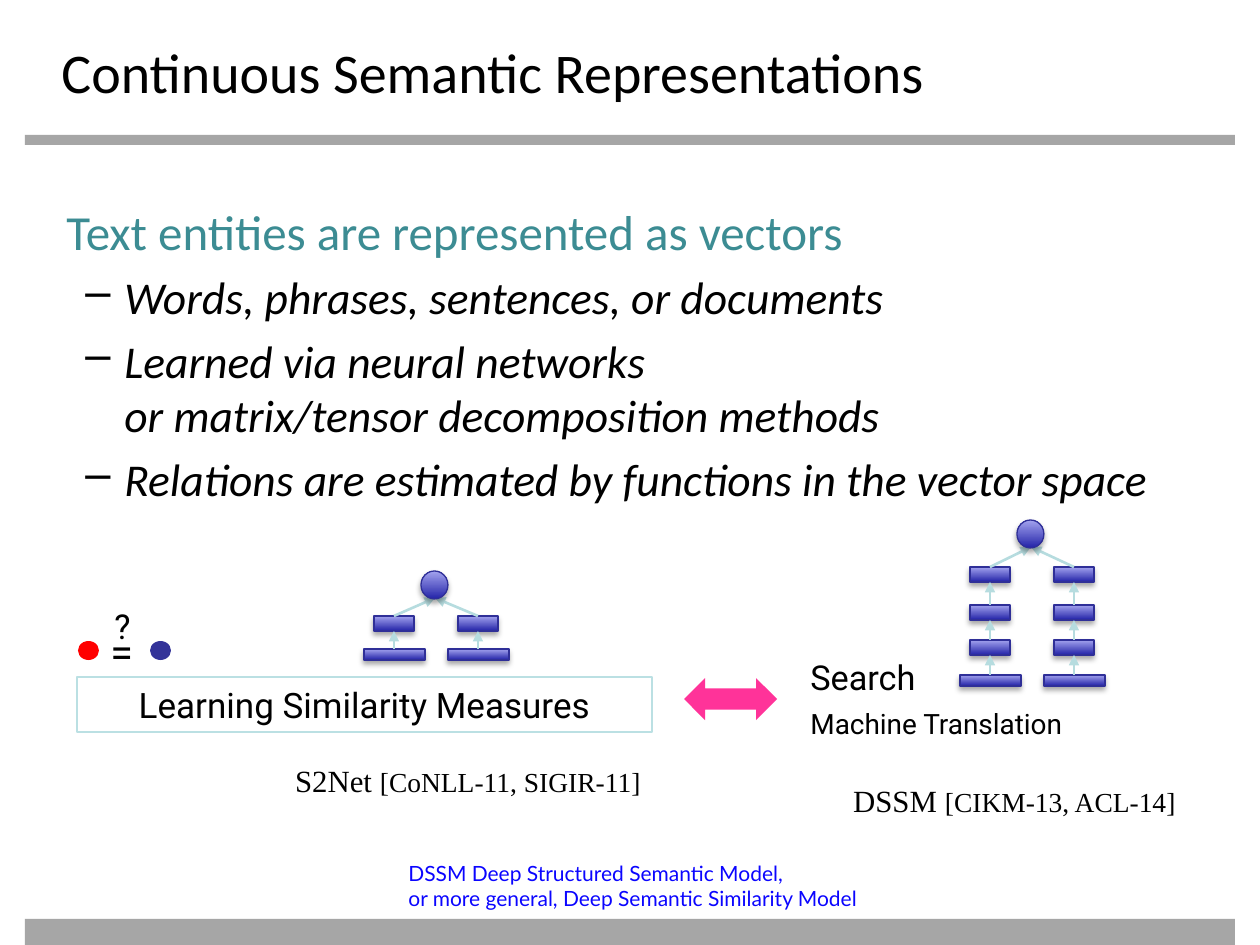
from lxml import etree
from pptx import Presentation
from pptx.dml.color import RGBColor
from pptx.enum.shapes import MSO_CONNECTOR, MSO_SHAPE
from pptx.enum.text import MSO_ANCHOR, PP_ALIGN
from pptx.oxml.ns import qn
from pptx.util import Pt

RECT = MSO_SHAPE.RECTANGLE
OVAL = MSO_SHAPE.OVAL
DOT = MSO_SHAPE.FLOWCHART_CONNECTOR
DOUBLE = MSO_SHAPE.LEFT_RIGHT_ARROW
STRAIGHT = MSO_CONNECTOR.STRAIGHT
TOP, MIDDLE = MSO_ANCHOR.TOP, MSO_ANCHOR.MIDDLE
LEFT, CENTER, RIGHT = PP_ALIGN.LEFT, PP_ALIGN.CENTER, PP_ALIGN.RIGHT

SCALE = 914400 / 126
COLORS = {
    "black": "000000", "gray": "A6A6A6", "teal": "3C8C93", "pale": "BBE0E3",
    "red": "FF0000", "navy": "333399", "pink": "FF3399", "note": "0B05FF",
    "dark": "2424A8", "light": "A4A4EF", "edge": "2F2F98", "arrow": "B6DCDF",
}


def px(n):
    """Turn px into EMU."""
    return round(n * SCALE)


def rgb(name):
    """Look up a colour by name."""
    return RGBColor.from_string(COLORS[name])


def style(run, size, font, color="black", italic=False):
    """Format one run."""
    run.font.size = Pt(size)
    run.font.name = font
    run.font.italic = italic
    run.font.color.rgb = rgb(color)


def shape(slide, kind, box, fill=None, line=None):
    """Add a flat shape."""
    item = slide.shapes.add_shape(kind, *map(px, box))
    item.shadow.inherit = False
    if fill:
        item.fill.solid()
        item.fill.fore_color.rgb = rgb(fill)
    else:
        item.fill.background()
    if line:
        item.line.color.rgb = rgb(line)
        item.line.width = Pt(0.75)
    else:
        item.line.fill.background()
    return item


def write(item, parts, font, color="black", align=LEFT, anchor=TOP):
    """Put one paragraph of (words, size) parts into a shape."""
    frame = item.text_frame
    frame.word_wrap = True
    frame.vertical_anchor = anchor
    para = frame.paragraphs[0]
    para.text = parts[0][0]
    for words, _ in parts[1:]:
        para.add_run().text = words
    para.alignment = align
    sizes = [size for _, size in parts] if len(parts) > 1 else [parts[0][1]] * len(para.runs)
    for run, size in zip(para.runs, sizes):
        style(run, size, font, color)


def label(slide, box, parts, font, color="black", align=LEFT):
    """Add a text box."""
    write(slide.shapes.add_textbox(*map(px, box)), parts, font, color, align)


def arrow(slide, start, end):
    """Add a line with a head at its end."""
    line = slide.shapes.add_connector(STRAIGHT, *map(px, start + end))
    line.line.color.rgb = rgb("arrow")
    line.line.width = Pt(1.5)
    etree.SubElement(line.line._get_or_add_ln(), qn("a:tailEnd"), type="triangle")
    etree.SubElement(line._element.spPr, qn("a:effectLst"))


def node(slide, kind, box):
    """Add a shaded network part with a soft shadow."""
    item = shape(slide, kind, box, "dark", "edge")
    item.fill.gradient()
    item.fill.gradient_angle = 90
    for stop, name in zip(item.fill.gradient_stops, ("dark", "light")):
        stop.color.rgb = rgb(name)
    effects = item._element.spPr.find(qn("a:effectLst"))
    shade = etree.SubElement(effects, qn("a:outerShdw"), blurRad="39370",
                             dist="22860", dir="5400000", rotWithShape="0")
    tint = etree.SubElement(shade, qn("a:srgbClr"), val=COLORS["black"])
    etree.SubElement(tint, qn("a:alpha"), val="35000")


def tower(slide, x, y, tops):
    """Draw twin stacks of layers that meet in a ball."""
    high, low = 15, tops[-1]
    for left in (x, x + 84):
        mid = left + 30
        node(slide, RECT, (left, y + low, 61, 11))
        for top in tops[:-1]:
            node(slide, RECT, (left + 10, y + top, 40, high))
        for upper, lower in zip(tops, tops[1:]):
            arrow(slide, (mid, y + lower), (mid, y + upper + high))
        arrow(slide, (mid, y + tops[0]), (x + 71, y + 27))
    node(slide, OVAL, (x + 57, y, 27, 28))


def frame(slide, wide, high):
    """Draw the title and the two gray bars."""
    shape(slide, RECT, (25, 135, wide - 50, 10), "gray")
    shape(slide, RECT, (25, high - 26, wide - 50, 26), "gray")
    label(slide, (49, 31, 1154, 77), [("Continuous Semantic Representations", 32)], "Calibri")


def points(slide, box):
    """Write the heading and its dashed points."""
    rows = [
        "Text entities are represented as vectors",
        "Words, phrases, sentences, or documents",
        "Learned via neural networks\vor matrix/tensor decomposition methods",
        "Relations are estimated by functions in the vector space",
    ]
    text = slide.shapes.add_textbox(*map(px, box)).text_frame
    text.word_wrap = True
    text.text = "\n".join(rows)
    for i, para in enumerate(text.paragraphs):
        props = para._p.get_or_add_pPr()
        props.set("marL", str(px(102 if i else 44)))
        props.set("indent", str(px(-39 if i else 0)))
        if i:
            para.space_before = Pt(5.2)
            etree.SubElement(props, qn("a:buChar"), char="–")
        for run in para.runs:
            style(run, 26 if i else 28, "Calibri", "black" if i else "teal", bool(i))


def learn(slide, x, y):
    """Draw the similarity panel."""
    panel = shape(slide, RECT, (x, y + 106, 575, 55), line="pale")
    write(panel, [("Learning Similarity Measures", 20)], "Roboto", align=CENTER, anchor=MIDDLE)
    for left, color in ((1, "red"), (73, "navy")):
        shape(slide, DOT, (x + left, y + 70, 21, 19), color)
    label(slide, (x + 21, y + 49, 55, 63), [("=", 23.5)], "Roboto")
    label(slide, (x + 25, y + 28, 43, 54), [("?", 19.6)], "Roboto")
    tower(slide, x + 287, y, (45, 78))
    label(slide, (x + 154, y + 185, 422, 50),
          [("S2Net ", 17.6), ("[CoNLL-11, SIGIR-11]", 15.7)], "Times New Roman", align=RIGHT)


def search(slide, x, y):
    """Draw the search and translation panel."""
    shape(slide, DOUBLE, (x, y + 158, 93, 42), "pink")
    label(slide, (x + 114, y + 130, 257, 54), [("Search", 19.6)], "Roboto")
    label(slide, (x + 114, y + 180, 335, 47), [("Machine Translation", 16)], "Roboto")
    tower(slide, x + 276, y, (47, 85, 120, 155))
    label(slide, (x + 82, y + 256, 422, 50),
          [("DSSM ", 17.6), ("[CIKM-13, ACL-14]", 15.7)], "Times New Roman", align=RIGHT)


def main():
    """Build the slide and save it."""
    deck = Presentation()
    deck.slide_width, deck.slide_height = px(1260), px(945)
    slide = deck.slides.add_slide(deck.slide_layouts[6])
    frame(slide, 1260, 945)
    points(slide, (10, 195, 1232, 325))
    learn(slide, 77, 571)
    search(slide, 684, 520)
    note = "DSSM Deep Structured Semantic Model,\vor more general, Deep Semantic Similarity Model"
    label(slide, (396, 854, 630, 63), [(note, 12)], "Lato", "note")
    deck.save("out.pptx")


if __name__ == "__main__":
    main()
